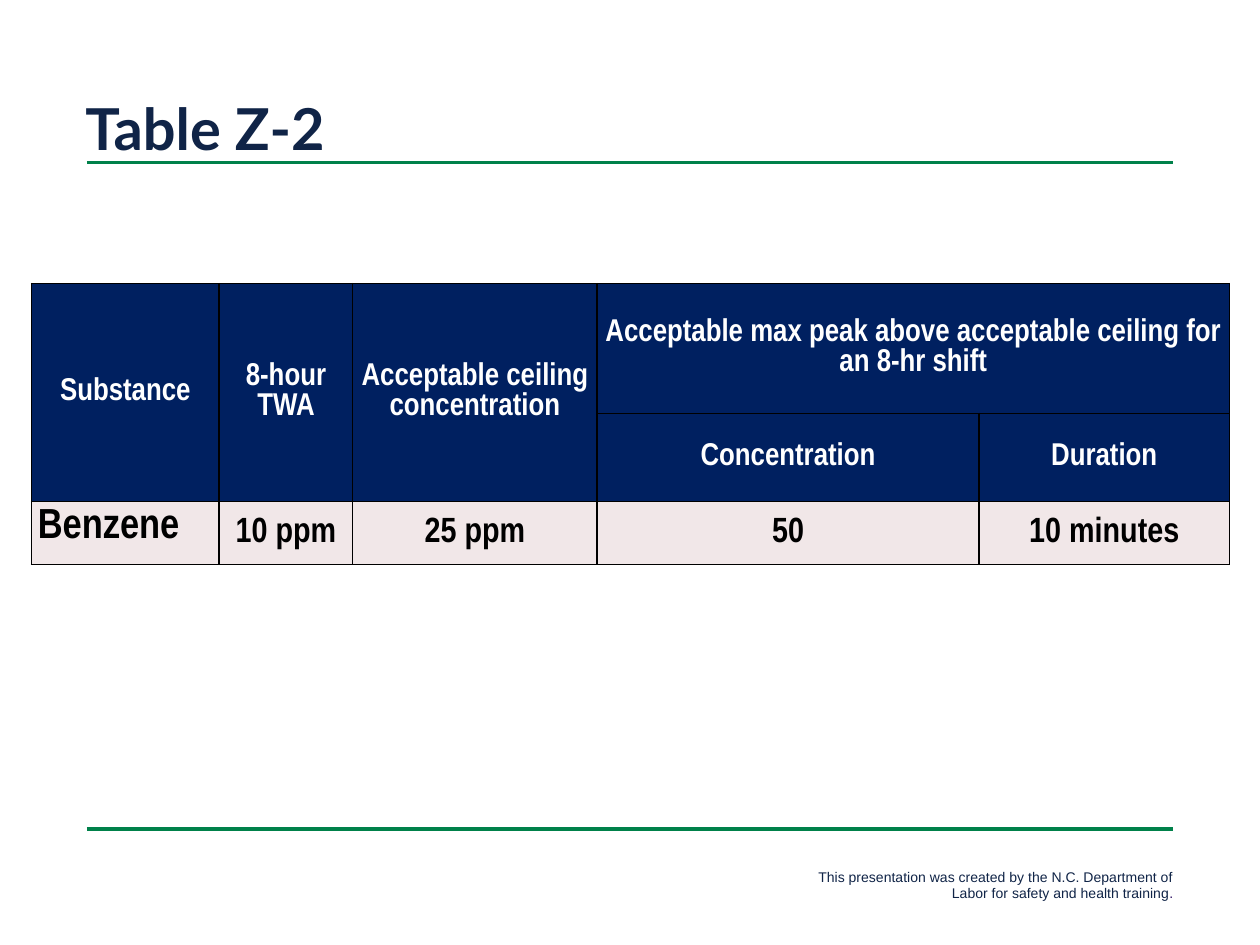
from lxml import etree
from pptx import Presentation
from pptx.dml.color import RGBColor
from pptx.enum.shapes import MSO_CONNECTOR
from pptx.enum.text import MSO_ANCHOR as Anchor, PP_ALIGN as Align
from pptx.oxml import parse_xml
from pptx.oxml.ns import nsdecls, qn
from pptx.util import Inches, Pt

NAVY, GREEN, INK = "002060", "00814A", "102447"
WHITE, BLACK, PALE = "FFFFFF", "000000", "F1E7E8"


def color(value):
    return RGBColor.from_string(value)


def format_runs(paragraph, name, size, value, bold=False):
    for run in paragraph.runs:
        run.font.name = name
        run.font.size = Pt(size)
        run.font.bold = bold
        run.font.color.rgb = color(value)


presentation = Presentation()
presentation.slide_width = Inches(10)
presentation.slide_height = Inches(7.5)
slide = presentation.slides.add_slide(presentation.slide_layouts[6])

# Rules below the title and above the footer
for y in (1.29, 6.58):
    rule = slide.shapes.add_connector(
        MSO_CONNECTOR.STRAIGHT, Inches(0.69), Inches(y), Inches(9.31), Inches(y))
    rule.line.color.rgb = color(GREEN)
    rule.line.width = Pt(2)
    etree.SubElement(rule.element.spPr, qn("a:effectLst"))

# Footer
footer = slide.shapes.add_textbox(Inches(6.16), Inches(6.84), Inches(3.25), Inches(0.37))
footer.text_frame.word_wrap = True
paragraph = footer.text_frame.paragraphs[0]
paragraph.text = "This presentation was created by the N.C. Department of Labor for safety and health training"
paragraph.add_run().text = "."
paragraph.alignment = Align.RIGHT
format_runs(paragraph, "Arial", 8, INK)
paragraph.runs[-1].font.color.rgb = color("2B0E62")

# Exposure limits table
rows = [
    ["Substance", "8-hour TWA", "Acceptable ceiling concentration",
     "Acceptable max peak above acceptable ceiling for an 8-hr shift", ""],
    ["", "", "", "Concentration", "Duration"],
    ["Benzene", "10 ppm", "25 ppm", "50", "10 minutes"],
]
column_widths = [1.49, 1.06, 1.94, 3.03, 1.99]
row_heights = [1.03, 0.7, 0.5]
table = slide.shapes.add_table(
    len(rows), len(column_widths), Inches(0.25), Inches(2.25),
    Inches(sum(column_widths)), Inches(sum(row_heights))).table
for column, width in zip(table.columns, column_widths):
    column.width = Inches(width)
for row, height in zip(table.rows, row_heights):
    row.height = Inches(height)

for row_index, texts in enumerate(rows):
    is_header = row_index < 2
    for column_index, text in enumerate(texts):
        cell = table.cell(row_index, column_index)
        is_substance = not is_header and column_index == 0
        cell.margin_left = cell.margin_right = Inches(0.05)
        cell.margin_top = cell.margin_bottom = Inches(0.05)
        cell.vertical_anchor = Anchor.TOP if is_substance else Anchor.MIDDLE

        # Borders come before the fill in the cell properties
        properties = cell._tc.get_or_add_tcPr()
        for side in ("lnL", "lnR", "lnT", "lnB"):
            properties.append(parse_xml(
                f'<a:{side} {nsdecls("a")} w="{Pt(1)}"><a:solidFill>'
                f'<a:srgbClr val="{BLACK}"/></a:solidFill></a:{side}>'))
        cell.fill.solid()
        cell.fill.fore_color.rgb = color(NAVY if is_header else PALE)

        if text:
            paragraph = cell.text_frame.paragraphs[0]
            paragraph.text = text
            paragraph.alignment = Align.LEFT if is_substance else Align.CENTER
            size = 18 if is_header else 24 if is_substance else 20
            format_runs(paragraph, "Arial Narrow", size, WHITE if is_header else BLACK, True)

for column_index in range(3):
    table.cell(0, column_index).merge(table.cell(1, column_index))
table.cell(0, 3).merge(table.cell(0, 4))

# Title, raised to sit on the upper rule
title = slide.shapes.add_textbox(Inches(0.58), Inches(0.28), Inches(8.58), Inches(1.72))
title.text_frame.word_wrap = True
title.text_frame.vertical_anchor = Anchor.MIDDLE
title.text_frame.margin_bottom = Inches(0.3)
title.text_frame.text = "Table Z-2"
format_runs(title.text_frame.paragraphs[0], "Lato", 33, INK, True)

presentation.save("out.pptx")
